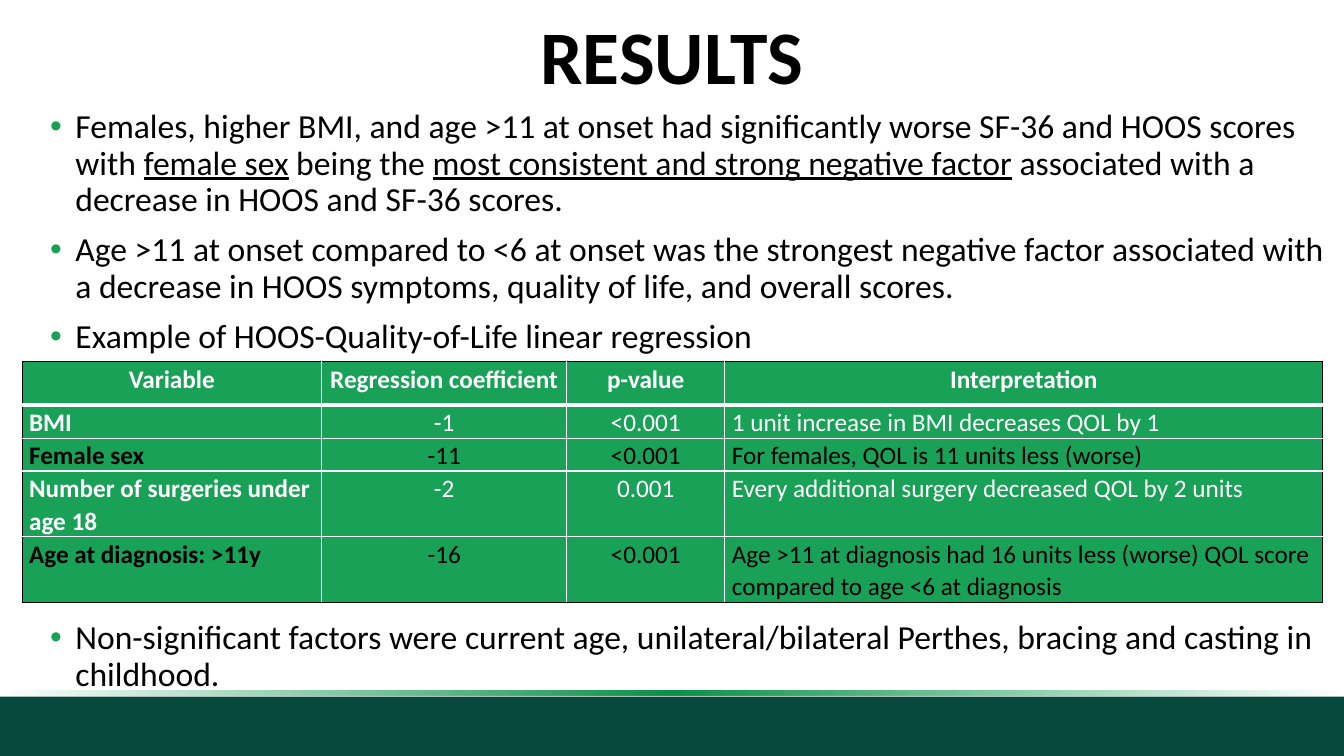
"""Build the results slide with its findings and regression table."""
from dataclasses import dataclass

from lxml import etree
from pptx import Presentation
from pptx.dml.color import RGBColor
from pptx.enum.shapes import MSO_SHAPE
from pptx.enum.text import MSO_ANCHOR, PP_ALIGN
from pptx.oxml.ns import qn
from pptx.util import Pt

RECT = MSO_SHAPE.RECTANGLE
LEFT, CENTER = PP_ALIGN.LEFT, PP_ALIGN.CENTER
TOP, MIDDLE, BOTTOM = MSO_ANCHOR.TOP, MSO_ANCHOR.MIDDLE, MSO_ANCHOR.BOTTOM

TITLE = "RESULTS"
POINTS = [
    [
        ("Females, higher BMI, and age >11 at onset had significantly worse SF-36 and HOOS scores with ", False),
        ("female sex", True),
        (" being the ", False),
        ("most consistent and strong negative factor", True),
        (" associated with a decrease in HOOS and SF-36 scores.", False),
    ],
    [("Age >11 at onset compared to <6 at onset was the strongest negative factor associated with "
      "a decrease in HOOS symptoms, quality of life, and overall scores.", False)],
    [("Example of HOOS-Quality-of-Life linear regression", False)],
]
CLOSING = [
    [("Non-significant factors were current age, unilateral/bilateral Perthes, "
      "bracing and casting in childhood.", False)],
]
ROWS = [
    ("Variable", "Regression coefficient", "p-value", "Interpretation"),
    ("BMI", "-1", "<0.001", "1 unit increase in BMI decreases QOL by 1"),
    ("Female sex", "-11", "<0.001", "For females, QOL is 11 units less (worse)"),
    ("Number of surgeries under age 18", "-2", "0.001",
     "Every additional surgery decreased QOL by 2 units"),
    ("Age at diagnosis: >11y", "-16", "<0.001",
     "Age >11 at diagnosis had 16 units less (worse) QOL score compared to age <6 at diagnosis"),
]
WIDTHS = (214, 175, 113, 427)
HEIGHTS = (31, 23.5, 23.5, 47, 47)
GLOW = ((0, "0D9D4F", 0), (50, "0C9049", 100), (100, "0FAB56", 0))


@dataclass(frozen=True)
class Theme:
    """Colours, font and type sizes."""
    font: str = "Calibri"
    black: str = "000000"
    white: str = "FFFFFF"
    green: str = "19A157"
    dark: str = "07493C"
    title: float = 54
    body: float = 24
    cell: float = 18


T = Theme()


def add_run(para, text, size, color, bold=False, under=False):
    """Add one styled run."""
    run = para.add_run()
    run.text = text
    font = run.font
    font.name, font.size = T.font, Pt(size)
    font.bold, font.underline = bold, under
    font.color.rgb = RGBColor.from_string(color)


def add_bar(slide, box):
    """Add a plain bar without line or shadow."""
    bar = slide.shapes.add_shape(RECT, *map(Pt, box))
    bar.shadow.inherit = False
    bar.line.fill.background()
    return bar


def add_glow(bar):
    """Fill a bar with a gradient that fades at both ends."""
    bar.fill.gradient()
    bar.fill.gradient_angle = 0
    stops = bar.fill._xPr.find(qn("a:gradFill")).find(qn("a:gsLst"))
    for stop in list(stops):
        stops.remove(stop)
    for pos, color, alpha in GLOW:
        stop = etree.SubElement(stops, qn("a:gs"), pos=str(pos * 1000))
        tint = etree.SubElement(stop, qn("a:srgbClr"), val=color)
        etree.SubElement(tint, qn("a:alpha"), val=str(alpha * 1000))


def add_box(slide, box):
    """Add a wrapping text box and return its frame."""
    frame = slide.shapes.add_textbox(*map(Pt, box)).text_frame
    frame.word_wrap = True
    return frame


def add_list(slide, box, items):
    """Add a bulleted list."""
    frame = add_box(slide, box)
    for i, runs in enumerate(items):
        para = frame.add_paragraph() if i else frame.paragraphs[0]
        para.line_spacing = 0.9
        para.space_before = Pt(10 if i else 0)
        props = para._p.get_or_add_pPr()
        props.set("marL", str(Pt(18)))
        props.set("indent", str(-Pt(18)))
        hue = etree.SubElement(props, qn("a:buClr"))
        etree.SubElement(hue, qn("a:srgbClr"), val=T.green)
        etree.SubElement(props, qn("a:buFont"), typeface="Arial")
        etree.SubElement(props, qn("a:buChar"), char="•")
        for text, under in runs:
            add_run(para, text, T.body, T.black, under=under)


def add_edges(cell, row, col):
    """Draw black outer and white inner borders, thick below the header."""
    last, end = len(ROWS) - 1, len(WIDTHS) - 1
    edges = {
        "L": (col == 0, 1),
        "R": (col == end, 1),
        "T": (row == 0, 3 if row == 1 else 1),
        "B": (row == last, 3 if row == 0 else 1),
    }
    props = cell._tc.get_or_add_tcPr()
    for side, (outer, width) in edges.items():
        line = etree.SubElement(props, qn("a:ln" + side), w=str(Pt(width)))
        fill = etree.SubElement(line, qn("a:solidFill"))
        etree.SubElement(fill, qn("a:srgbClr"), val=T.black if outer else T.white)


def add_grid(slide, left, top):
    """Add the regression table."""
    size = (Pt(left), Pt(top), Pt(sum(WIDTHS)), Pt(sum(HEIGHTS)))
    table = slide.shapes.add_table(len(ROWS), len(WIDTHS), *size).table
    for col, width in enumerate(WIDTHS):
        table.columns[col].width = Pt(width)
    for row, texts in enumerate(ROWS):
        table.rows[row].height = Pt(HEIGHTS[row])
        color = T.black if row in (2, 4) else T.white
        for col, text in enumerate(texts):
            cell = table.cell(row, col)
            add_edges(cell, row, col)
            cell.fill.solid()
            cell.fill.fore_color.rgb = RGBColor.from_string(T.green)
            cell.margin_left = cell.margin_right = Pt(5)
            cell.margin_top = cell.margin_bottom = 0
            low = (col == 0 and row in (1, 2, 3)) or (col == 1 and row in (1, 2))
            cell.vertical_anchor = BOTTOM if low else TOP
            para = cell.text_frame.paragraphs[0]
            para.alignment = CENTER if row == 0 or col in (1, 2) else LEFT
            para.line_spacing = 1.07
            add_run(para, text, T.cell, color, bold=row == 0 or col == 0)


def main():
    """Compose and save the slide."""
    deck = Presentation()
    deck.slide_width, deck.slide_height = Pt(960), Pt(540)
    slide = deck.slides.add_slide(deck.slide_layouts[6])
    foot = add_bar(slide, (0, 497.5, 960, 42.5))
    foot.fill.solid()
    foot.fill.fore_color.rgb = RGBColor.from_string(T.dark)
    add_glow(add_bar(slide, (0, 493, 960, 4)))
    head = add_box(slide, (66, 10, 828, 65.5))
    head.vertical_anchor = MIDDLE
    para = head.paragraphs[0]
    para.alignment, para.line_spacing = CENTER, 0.9
    add_run(para, TITLE, T.title, T.black, bold=True)
    add_list(slide, (28.8, 75, 931, 183), POINTS)
    add_list(slide, (28.8, 440, 931, 58), CLOSING)
    add_grid(slide, 15.8, 258.5)
    deck.save("out.pptx")


if __name__ == "__main__":
    main()
